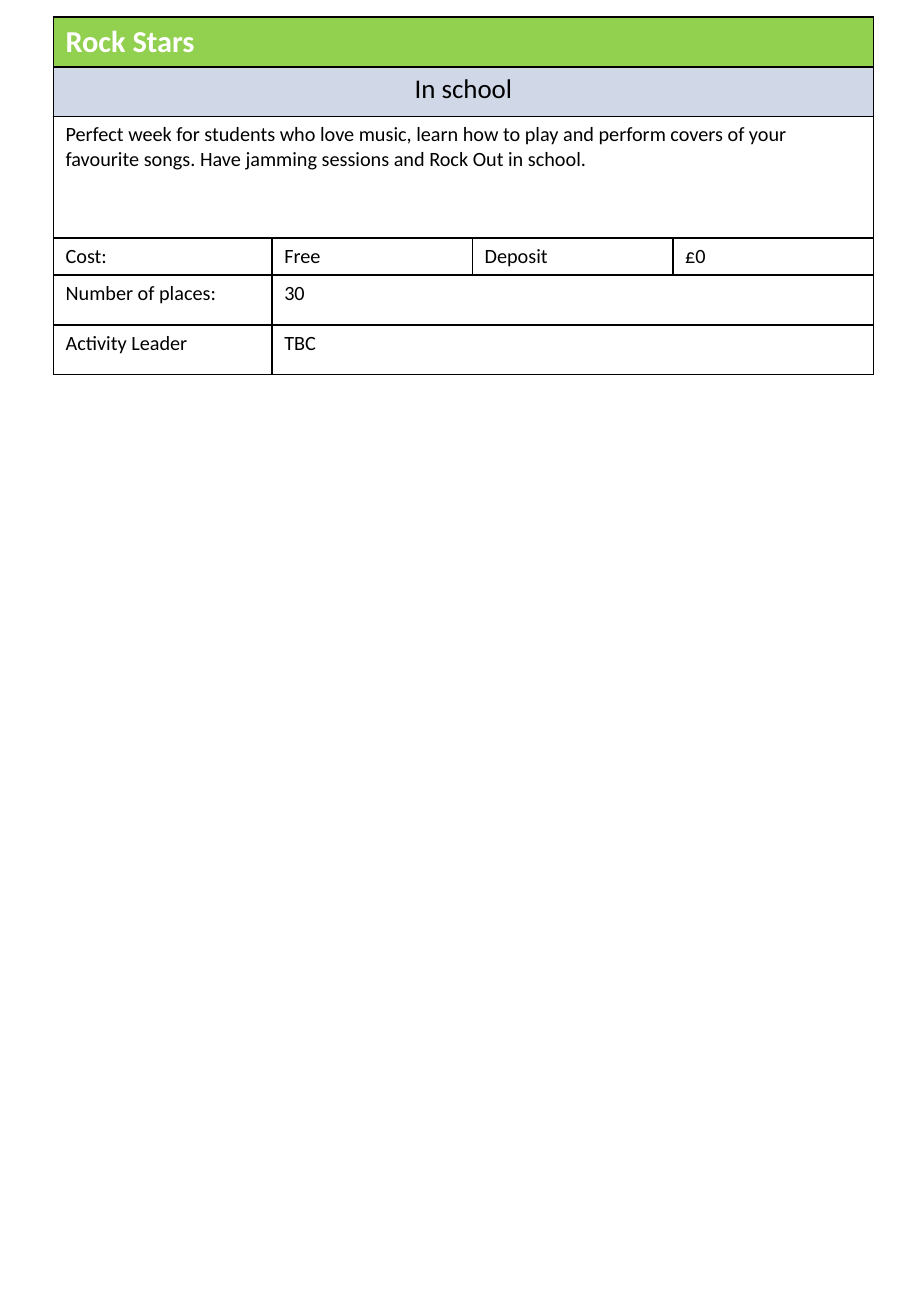
from dataclasses import dataclass

from lxml import etree
from pptx import Presentation
from pptx.dml.color import RGBColor
from pptx.enum.text import PP_ALIGN
from pptx.oxml.ns import qn
from pptx.util import Inches, Pt

LEFT = PP_ALIGN.LEFT
CENTER = PP_ALIGN.CENTER


@dataclass(frozen=True)
class Theme:
    font: str = "Calibri"
    title_size: int = 18
    subtitle_size: int = 16
    body_size: int = 12
    border_width: int = 1
    ink: str = "000000"
    title_ink: str = "FFFFFF"
    title_fill: str = "92D050"
    subtitle_fill: str = "D0D8E8"


class SlideBuilder:
    def __init__(self, prs, theme):
        self.theme = theme
        self.s = prs.slides.add_slide(prs.slide_layouts[6])

    def table(self, rows, left, top, widths, heights):
        frame = self.s.shapes.add_table(
            len(heights), len(widths), Inches(left), Inches(top),
            Inches(sum(widths)), Inches(sum(heights)))
        table = frame.table
        table.first_row = False
        table.horz_banding = False
        for column, width in zip(table.columns, widths):
            column.width = Inches(width)
        for row, height in zip(table.rows, heights):
            row.height = Inches(height)
        for cell in table.iter_cells():
            self.border(cell)
            cell.fill.background()
        for i, texts in enumerate(rows):
            last = len(texts) - 1
            if last < len(widths) - 1:
                table.cell(i, last).merge(table.cell(i, len(widths) - 1))
            for j, text in enumerate(texts):
                self.label(table.cell(i, j), text, self.theme.body_size, self.theme.ink)
        return table

    def border(self, cell):
        tc_pr = cell._tc.get_or_add_tcPr()
        for side in ("a:lnL", "a:lnR", "a:lnT", "a:lnB"):
            line = etree.SubElement(tc_pr, qn(side), w=str(Pt(self.theme.border_width)))
            fill = etree.SubElement(line, qn("a:solidFill"))
            etree.SubElement(fill, qn("a:srgbClr"), val=self.theme.ink)

    def label(self, cell, text, size, color, bold=False, align=LEFT):
        cell.text_frame.text = text
        p = cell.text_frame.paragraphs[0]
        p.alignment = align
        font = p.runs[0].font
        font.name = self.theme.font
        font.size = Pt(size)
        font.bold = bold
        font.color.rgb = RGBColor.from_string(color)

    def band(self, cell, fill, size, color, bold=False, align=LEFT):
        cell.fill.solid()
        cell.fill.fore_color.rgb = RGBColor.from_string(fill)
        self.label(cell, cell.text_frame.text, size, color, bold, align)


def main():
    theme = Theme()
    prs = Presentation()
    prs.slide_width = Inches(7.5)
    prs.slide_height = Inches(10.83)
    builder = SlideBuilder(prs, theme)
    activity = [
        ["Rock Stars"],
        ["In school"],
        ["Perfect week for students who love music, learn how to play and perform "
         "covers of your favourite songs. Have jamming sessions and Rock Out in school."],
        ["Cost:", "Free", "Deposit", "£0"],
        ["Number of places:", "30"],
        ["Activity Leader", "TBC"],
    ]
    table = builder.table(activity, 0.44, 0.14, [1.8] + [1.65] * 3,
                          [0.41, 0.41, 1, 0.3, 0.41, 0.41])
    builder.band(table.cell(0, 0), theme.title_fill, theme.title_size,
                 theme.title_ink, bold=True)
    builder.band(table.cell(1, 0), theme.subtitle_fill, theme.subtitle_size,
                 theme.ink, align=CENTER)
    prs.save("out.pptx")


if __name__ == "__main__":
    main()
